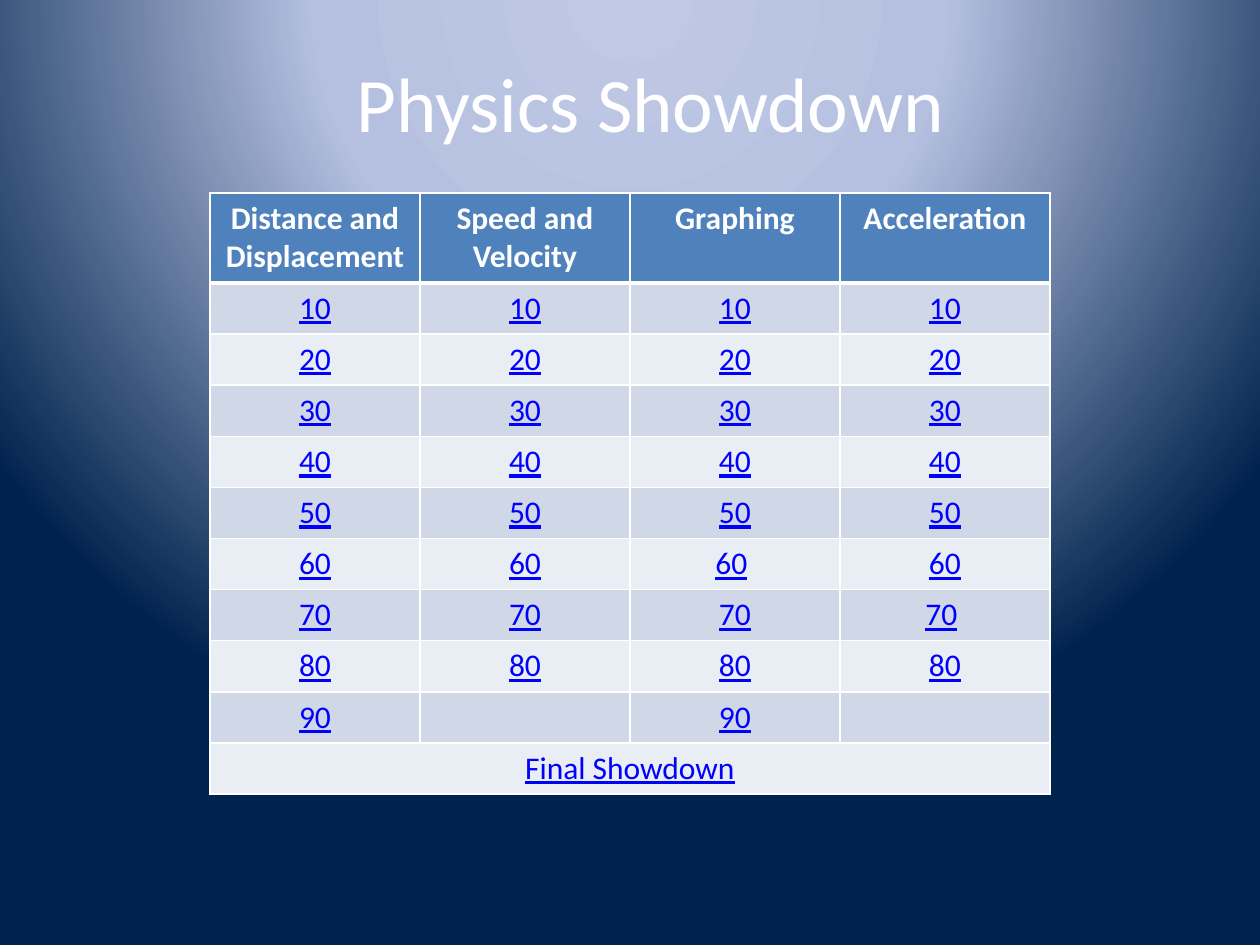
from lxml import etree
from pptx import Presentation, util as u
from pptx.dml.color import RGBColor
from pptx.enum import text
from pptx.oxml import parse_xml
from pptx.oxml.ns import nsdecls, qn

# Content
TITLE = "Physics Showdown"
CATEGORIES = ["Distance and Displacement", "Speed and Velocity", "Graphing", "Acceleration"]
TOP_SCORES = [90, 80, 90, 80]
SPACED = {(6, 2), (7, 3)}  # scores followed by a plain space
FINAL = "Final Showdown"

WHITE, BLACK, LINK, HEADER = "FFFFFF", "000000", "0000FF", "4F81BD"
BANDS = ["E9EDF4", "D0D8E8"]
BACKGROUND = [(0, "BFC9E5"), (40, "B5C0E0"), (100, "00234D")]

# Layout in px
SCALE = 914400 // 126
SLIDE = (1260, 945)
TITLE_BOX = (115, 0, 1071, 203)
LEFT, TOP, COLUMN, ROW, HEADER_ROW = 210, 193, 210, 51, 90


def px(value):
    return u.Emu(value * SCALE)


def color(value):
    return RGBColor.from_string(value)


def style(font, size, value, bold=False, underline=False):
    font.name, font.size = "Calibri", u.Pt(size)
    font.bold, font.underline = bold, underline
    font.color.rgb = color(value)


def paint_background(slide):
    slide.background.fill.solid()
    stops = "".join(f'<a:gs pos="{position * 1000}"><a:srgbClr val="{value}"/></a:gs>'
                    for position, value in BACKGROUND)
    gradient = parse_xml(
        f'<a:gradFill {nsdecls("a")} rotWithShape="1"><a:gsLst>{stops}</a:gsLst>'
        '<a:path path="circle"><a:fillToRect l="50000" t="-80000" r="50000" b="180000"/>'
        '</a:path></a:gradFill>')
    properties = next(slide.element.iter(qn("p:bgPr")))
    properties.replace(properties[0], gradient)


def add_borders(cell, bottom):
    properties = cell._tc.get_or_add_tcPr()
    for index, (side, width) in enumerate([("L", 1), ("R", 1), ("T", 1), ("B", bottom)]):
        line = etree.Element(qn(f"a:ln{side}"), w=str(u.Pt(width)))
        fill = etree.SubElement(line, qn("a:solidFill"))
        etree.SubElement(fill, qn("a:srgbClr"), val=WHITE)
        properties.insert(index, line)


def fill_cell(cell, words, background, header=False):
    cell.fill.solid()
    cell.fill.fore_color.rgb = color(background)
    add_borders(cell, 3 if header else 1)
    paragraph = cell.text_frame.paragraphs[0]
    paragraph.alignment = text.PP_ALIGN.CENTER
    style(paragraph.font, 18, WHITE if header else LINK, bold=header, underline=not header)
    if words:
        paragraph.add_run().text = words
    return paragraph


presentation = Presentation()
presentation.slide_width, presentation.slide_height = map(px, SLIDE)
slide = presentation.slides.add_slide(presentation.slide_layouts[6])
paint_background(slide)

# Score board
scores = range(10, max(TOP_SCORES) + 1, 10)
last = len(scores) + 1
columns = len(CATEGORIES)
table = slide.shapes.add_table(
    last + 1, columns, px(LEFT), px(TOP), px(COLUMN * columns), px(HEADER_ROW + ROW * last)).table
for index, row in enumerate(table.rows):
    row.height = px(ROW if index else HEADER_ROW)

for column, category in enumerate(CATEGORIES):
    fill_cell(table.cell(0, column), category, HEADER, header=True)
    for row, score in enumerate(scores, 1):
        words = str(score) if score <= TOP_SCORES[column] else ""
        paragraph = fill_cell(table.cell(row, column), words, BANDS[row % 2])
        if (row, column) in SPACED:
            space = paragraph.add_run()
            space.text = " "
            style(space.font, 18, BLACK)

# Final row across the board
table.cell(last, 0).merge(table.cell(last, columns - 1))
for column in range(columns):
    fill_cell(table.cell(last, column), "" if column else FINAL, BANDS[last % 2])

# Title
frame = slide.shapes.add_textbox(*map(px, TITLE_BOX)).text_frame
frame.word_wrap = True
frame.vertical_anchor = text.MSO_ANCHOR.MIDDLE
paragraph = frame.paragraphs[0]
paragraph.text = TITLE
paragraph.alignment = text.PP_ALIGN.CENTER
style(paragraph.font, 44, WHITE)

presentation.save("out.pptx")
